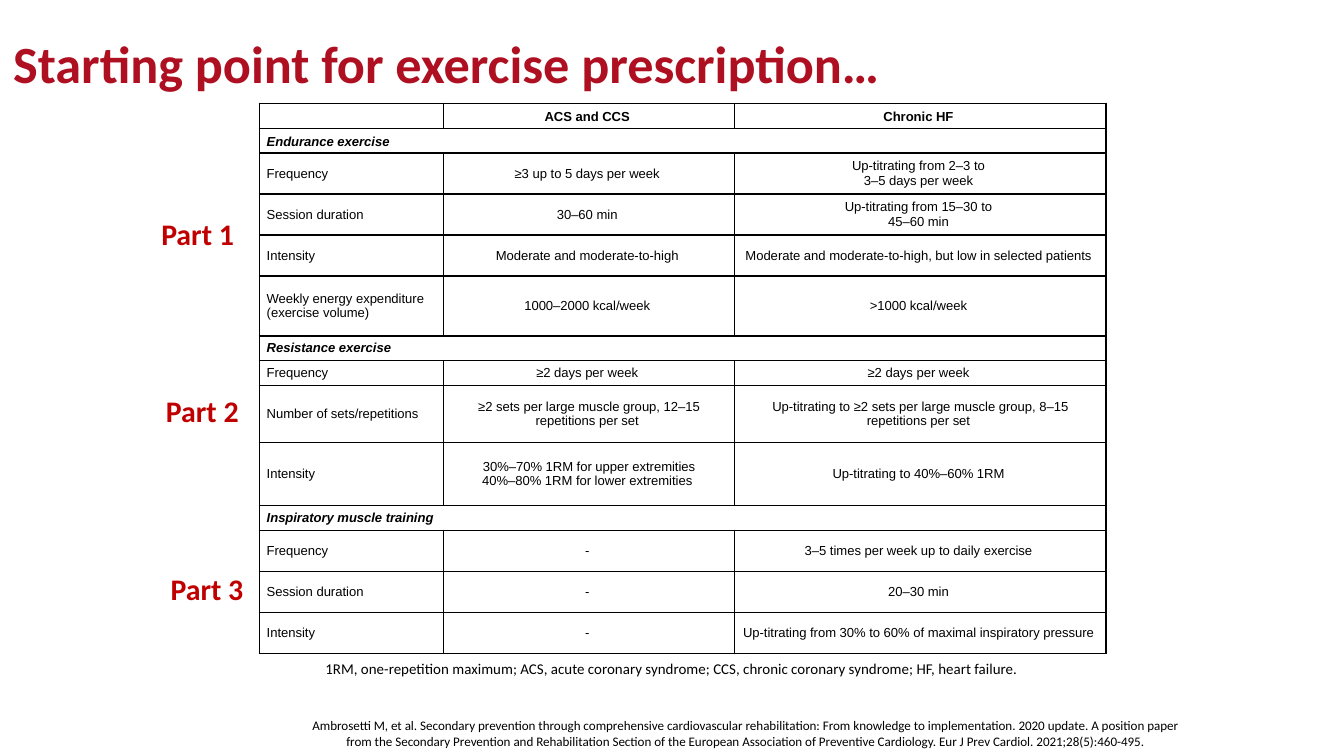
from dataclasses import dataclass

from lxml import etree
from pptx import Presentation
from pptx import util as u
from pptx.dml.color import RGBColor
from pptx.enum import text
from pptx.oxml.ns import qn

PX = 914400 // 200  # 200 px to the inch
NBSP = chr(160)     # the table's entries end in a fixed space


@dataclass(frozen=True)
class Theme:
    title_color: str = "AE1022"
    part_color: str = "C00000"
    ink: str = "000000"
    text_font: str = "Calibri"
    table_font: str = "Arial"
    title_size: int = 28
    part_size: int = 16
    caption_size: int = 8
    small_size: int = 7


class Deck:
    def __init__(self, theme, width, height):
        self.theme = theme
        self.presentation = Presentation()
        self.presentation.slide_width = u.Emu(width * PX)
        self.presentation.slide_height = u.Emu(height * PX)
        self.slide = self.presentation.slides.add_slide(self.presentation.slide_layouts[6])

    def style(self, paragraph, font, size, color, bold=False, italic=False, center=False):
        paragraph.alignment = text.PP_ALIGN.CENTER if center else text.PP_ALIGN.LEFT
        paragraph.font.name = font
        paragraph.font.size = u.Pt(size)
        paragraph.font.color.rgb = RGBColor.from_string(color)
        paragraph.font.bold = bold
        paragraph.font.italic = italic

    def label(self, words, left, top, width, height, size, color,
              bold=False, center=False, wrap=True, inset=20):
        box = self.slide.shapes.add_textbox(*(u.Emu(v * PX) for v in (left, top, width, height)))
        frame = box.text_frame
        frame.word_wrap = wrap
        frame.margin_left = u.Emu(inset * PX)
        frame.text = words
        self.style(frame.paragraphs[0], self.theme.text_font, size, color, bold, center=center)

    def borders(self, cell):
        properties = cell._tc.get_or_add_tcPr()
        for position, side in enumerate(("a:lnL", "a:lnR", "a:lnT", "a:lnB")):
            line = etree.Element(qn(side), w=str(u.Pt(1)))
            fill = etree.SubElement(line, qn("a:solidFill"))
            etree.SubElement(fill, qn("a:srgbClr"), val=self.theme.ink)
            properties.insert(position, line)

    def cell(self, cell, words, bold, italic, center, anchor):
        cell.fill.background()
        self.borders(cell)
        cell.margin_left = cell.margin_right = u.Emu(11 * PX)
        cell.margin_top = cell.margin_bottom = u.Emu(6 * PX)
        cell.vertical_anchor = anchor
        if words:
            cell.text_frame.text = words.replace("\v", NBSP + "\v") + NBSP
        size = self.theme.small_size
        for paragraph in cell.text_frame.paragraphs:
            self.style(paragraph, self.theme.table_font, size, self.theme.ink,
                       bold, italic, center)
            if not words:
                etree.SubElement(paragraph._p, qn("a:endParaRPr"), sz=str(size * 100))

    def table(self, rows, left, top, widths, heights):
        """Rows with a single entry become section headings across all columns."""
        frame = self.slide.shapes.add_table(
            len(rows), len(widths), u.Emu(left * PX), u.Emu(top * PX),
            u.Emu(sum(widths) * PX), u.Emu(sum(heights) * PX))
        table = frame.table
        table.horz_banding = False
        for column, width in zip(table.columns, widths):
            column.width = u.Emu(width * PX)
        for r, (entries, height) in enumerate(zip(rows, heights)):
            table.rows[r].height = u.Emu(height * PX)
            section = len(entries) == 1
            anchor = text.MSO_ANCHOR.BOTTOM if r < 2 else text.MSO_ANCHOR.MIDDLE
            for c in range(len(widths)):
                words = entries[c] if c < len(entries) else ""
                self.cell(table.cell(r, c), words, section or r == 0, section, c > 0, anchor)
            if section:
                table.cell(r, 0).merge(table.cell(r, len(widths) - 1))


PRESCRIPTION = [
    ("", "ACS and CCS", "Chronic HF"),
    ("Endurance exercise",),
    ("Frequency", "≥3 up to 5 days per week", "Up-titrating from 2–3 to\v3–5 days per week"),
    ("Session duration", "30–60 min", "Up-titrating from 15–30 to\v45–60 min"),
    ("Intensity", "Moderate and moderate-to-high",
     "Moderate and moderate-to-high, but low in selected patients"),
    ("Weekly energy expenditure (exercise volume)", "1000–2000 kcal/week", ">1000 kcal/week"),
    ("Resistance exercise",),
    ("Frequency", "≥2 days per week", "≥2 days per week"),
    ("Number of sets/repetitions",
     "≥2 sets per large muscle group, 12–15 repetitions per set",
     "Up-titrating to ≥2 sets per large muscle group, 8–15 repetitions per set"),
    ("Intensity",
     "30%–70% 1RM for upper extremities\n40%–80% 1RM for lower extremities",
     "Up-titrating to 40%–60% 1RM"),
    ("Inspiratory muscle training",),
    ("Frequency", "-", "3–5 times per week up to daily exercise"),
    ("Session duration", "-", "20–30 min"),
    ("Intensity", "-", "Up-titrating from 30% to 60% of maximal inspiratory pressure"),
]
SHORT, MEDIUM = 37, 61
ROW_HEIGHTS = [SHORT] * 2 + [MEDIUM] * 3 + [89] + [SHORT] * 2 + [85, 94, SHORT] + [MEDIUM] * 3
ABBREVIATIONS = ("1RM, one-repetition maximum; ACS, acute coronary syndrome; "
                 "CCS, chronic coronary syndrome; HF, heart failure.")
CITATION = (
    "Ambrosetti M, et al. Secondary prevention through comprehensive cardiovascular "
    "rehabilitation: From knowledge to implementation. 2020 update. A position paper from the "
    "Secondary Prevention and Rehabilitation Section of the European Association of Preventive "
    "Cardiology. Eur J Prev Cardiol. 2021;28(5):460-495.")


def main():
    theme = Theme()
    deck = Deck(theme, 2000, 1125)
    deck.label("Starting point for exercise prescription…", 0, 37, 1890, 90,
               theme.title_size, theme.title_color, bold=True)
    deck.table(PRESCRIPTION, 386, 154, (274, 433, 553), ROW_HEIGHTS)
    deck.label(ABBREVIATIONS, 354, 972, 1292, 48, theme.caption_size, theme.ink, center=True)
    for step in range(3):
        deck.label(f"Part {step + 1}", 212 + 7 * step, 311 + 264 * step, 158, 74,
                   theme.part_size, theme.part_color, bold=True, wrap=False, inset=28)
    deck.label(CITATION, 434, 1058, 1350, 68, theme.small_size, theme.ink, center=True)
    deck.presentation.save("out.pptx")


if __name__ == "__main__":
    main()
